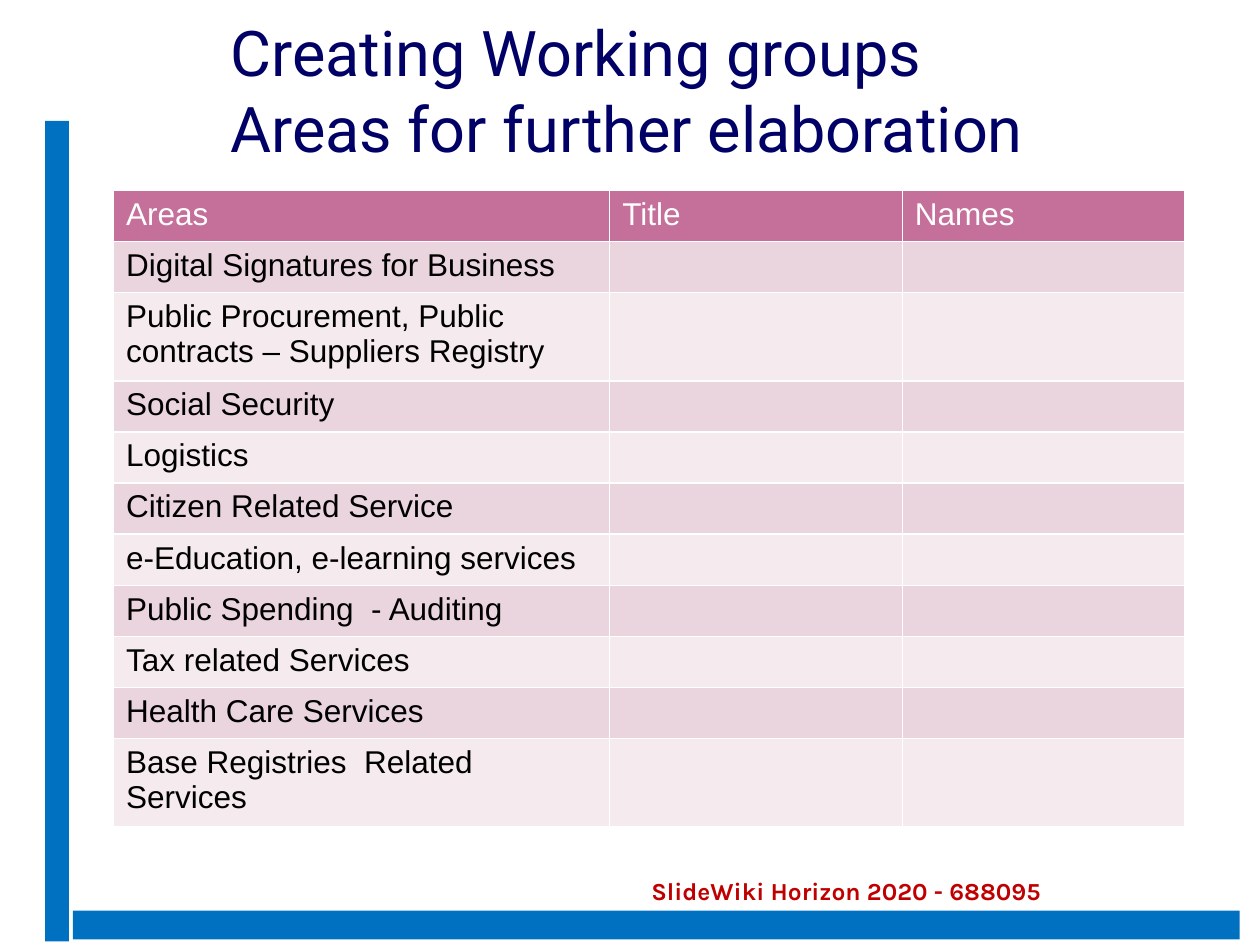
from pptx import Presentation
from pptx.dml.color import RGBColor
from pptx.enum.shapes import MSO_SHAPE
from pptx.enum.text import MSO_ANCHOR, MSO_AUTO_SIZE, PP_ALIGN
from pptx.util import Cm, Pt


def paint(target, color):
    target.solid()
    target.fore_color.rgb = RGBColor.from_string(color)


def style(para, face, size, color, bold=False):
    font = para.font
    font.name, font.size, font.bold = face, Pt(size), bold
    font.color.rgb = RGBColor.from_string(color)


deck = Presentation()
deck.slide_width, deck.slide_height = Cm(25.4), Cm(19.05)
slide = deck.slides.add_slide(deck.slide_layouts[5])
shapes = slide.shapes

for box in [(0.91, 2.44, 0.48, 16.54), (1.47, 18.36, 23.52, 0.58)]:
    bar = shapes.add_shape(MSO_SHAPE.RECTANGLE, *map(Cm, box))
    bar.shadow.inherit = False
    paint(bar.fill, "0070C0")
    bar.line.fill.background()

note = shapes.add_textbox(Cm(12.88), Cm(17.53), Cm(10.67), Cm(0.86)).text_frame
note.word_wrap = True
note.auto_size = MSO_AUTO_SIZE.SHAPE_TO_FIT_TEXT
note.text = "SlideWiki Horizon 2020 - 688095"
style(note.paragraphs[0], "Karla", 14, "C00000", True)

title = shapes.title
title.left, title.top, title.width, title.height = Cm(4.39), Cm(0.61), Cm(17.02), Cm(2.84)
frame = title.text_frame
frame.auto_size = MSO_AUTO_SIZE.NONE
frame.vertical_anchor = MSO_ANCHOR.BOTTOM
frame.text = "Creating Working groups \vAreas for further elaboration"
frame.paragraphs[0].alignment = PP_ALIGN.LEFT
style(frame.paragraphs[0], "Roboto", 36, "000066")

heads = ["Areas", "Title", "Names"]
areas = [
    "Digital Signatures for Business",
    "Public Procurement, Public contracts – Suppliers Registry",
    "Social Security",
    "Logistics",
    "Citizen Related Service",
    "e-Education, e-learning services",
    "Public Spending  - Auditing",
    "Tax related Services",
    "Health Care Services",
    "Base Registries  Related Services",
]
rows = [heads] + [[area, "", ""] for area in areas]
widths = [10, 5.9, 5.69]
high = 1.03
table = shapes.add_table(
    len(rows), len(heads), Cm(2.29), Cm(3.84), Cm(sum(widths)), Cm(high * len(rows))
).table
for col, width in zip(table.columns, widths):
    col.width = Cm(width)
for r, row in enumerate(rows):
    table.rows[r].height = Cm(high)
    shade = "C4709A" if r == 0 else ("F5EBEF", "EAD5DE")[r % 2]
    for c, text in enumerate(row):
        cell = table.cell(r, c)
        paint(cell.fill, shade)
        cell.text = text
        style(cell.text_frame.paragraphs[0], "Arial", 18, "000000" if r else "FFFFFF")

deck.save("out.pptx")
